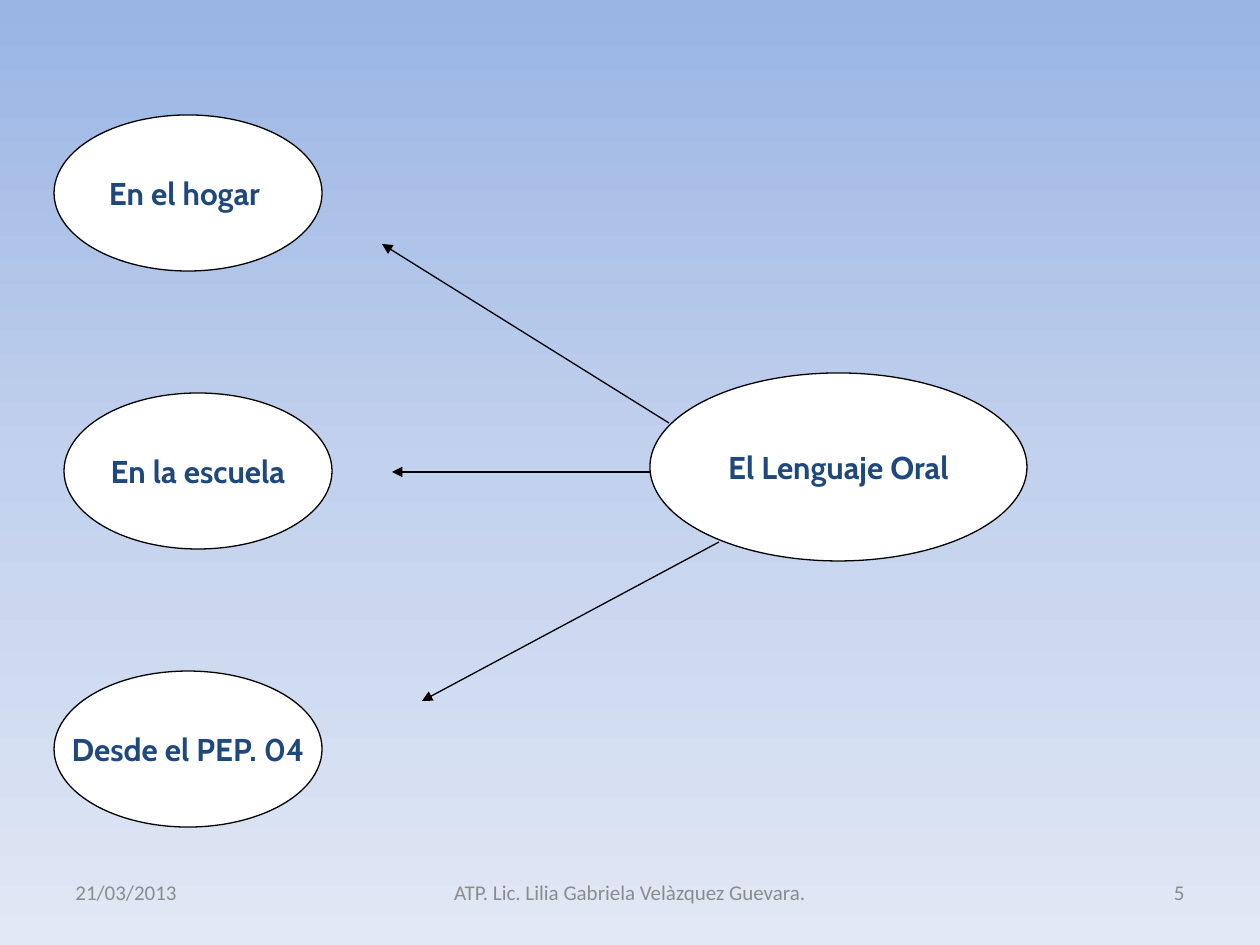
import copy
import dataclasses

import pptx
import pptx.dml.color
import pptx.enum.shapes
import pptx.enum.text
import pptx.oxml
import pptx.oxml.ns
import pptx.util

ALIGN = pptx.enum.text.PP_ALIGN
RGB = pptx.dml.color.RGBColor.from_string
qn = pptx.oxml.ns.qn


@dataclasses.dataclass(frozen=True)
class Theme:
    gradient: tuple = ((0, "9AB5E4"), (0.5, "C2D1ED"), (1, "E1E8F5"))
    fill: str = "FFFFFF"
    line: str = "000000"
    line_width: float = 0.75
    node: tuple = ("Cabin", 18, True, "1F497D")
    footer: tuple = ("Calibri", 12, False, "8C8C8C")


class SlideBuilder:
    def __init__(self, s, theme):
        self.s = s
        self.theme = theme

    @staticmethod
    def px(n):
        return pptx.util.Emu(round(n * 914400 / 126))

    def background(self):
        fill = self.s.background.fill
        fill.gradient()
        fill.gradient_angle = 270
        stops = next(self.s.element.iter(qn("a:gsLst")))
        stops.insert(1, copy.deepcopy(stops[0]))
        for stop, (position, color) in zip(fill.gradient_stops, self.theme.gradient):
            stop.position = position
            stop.color.rgb = RGB(color)

    def set_text(self, sp, text, style, align, wrap):
        tf = sp.text_frame
        frame_format = {
            "word_wrap": wrap,
            "vertical_anchor": pptx.enum.text.MSO_ANCHOR.MIDDLE,
        }
        for name, value in frame_format.items():
            setattr(tf, name, value)
        p = tf.paragraphs[0]
        p.alignment = align
        r = p.add_run()
        r.text = text
        font, size, bold, color = style
        run_format = {"name": font, "size": pptx.util.Pt(size), "bold": bold}
        for name, value in run_format.items():
            setattr(r.font, name, value)
        r.font.color.rgb = RGB(color)

    def outline(self, sp):
        sp.line.color.rgb = RGB(self.theme.line)
        sp.line.width = pptx.util.Pt(self.theme.line_width)

    def footer(self, text, x, w, align):
        sp = self.s.shapes.add_textbox(*map(self.px, (x, 861, w, 63)))
        self.set_text(sp, text, self.theme.footer, align, True)

    def ellipse(self, text, x, y, w, h):
        sp = self.s.shapes.add_shape(
            pptx.enum.shapes.MSO_SHAPE.OVAL, *map(self.px, (x, y, w, h))
        )
        sp.shadow.inherit = False
        sp.fill.solid()
        sp.fill.fore_color.rgb = RGB(self.theme.fill)
        self.outline(sp)
        self.set_text(sp, text, self.theme.node, ALIGN.CENTER, False)

    def arrow(self, *ends):
        sp = self.s.shapes.add_connector(
            pptx.enum.shapes.MSO_CONNECTOR.STRAIGHT, *map(self.px, ends)
        )
        self.outline(sp)
        ns = pptx.oxml.ns.nsdecls("a")
        properties = sp.element.spPr
        tail = pptx.oxml.parse_xml(f'<a:tailEnd {ns} type="triangle"/>')
        properties.find(qn("a:ln")).append(tail)
        properties.append(pptx.oxml.parse_xml(f"<a:effectLst {ns}/>"))


def main():
    prs = pptx.Presentation()
    prs.slide_width = SlideBuilder.px(1260)
    prs.slide_height = SlideBuilder.px(945)
    slide = SlideBuilder(prs.slides.add_slide(prs.slide_layouts[6]), Theme())

    slide.background()
    slide.footer("21/03/2013", 63, 294, ALIGN.LEFT)
    slide.footer("ATP. Lic. Lilia Gabriela Velàzquez Guevara.", 430, 400, ALIGN.CENTER)
    slide.footer("5", 903, 294, ALIGN.RIGHT)

    settings = (("En el hogar ", 54), ("En la escuela", 64), ("Desde el PEP. 04", 54))
    for i, (text, x) in enumerate(settings):
        slide.ellipse(text, x, 115 + 278 * i, 268, 156)

    for ends in ((669, 423, 382, 244), (650, 472, 392, 472), (719, 542, 422, 701)):
        slide.arrow(*ends)
    slide.ellipse("El Lenguaje Oral", 650, 373, 377, 188)

    prs.save("out.pptx")


if __name__ == "__main__":
    main()
